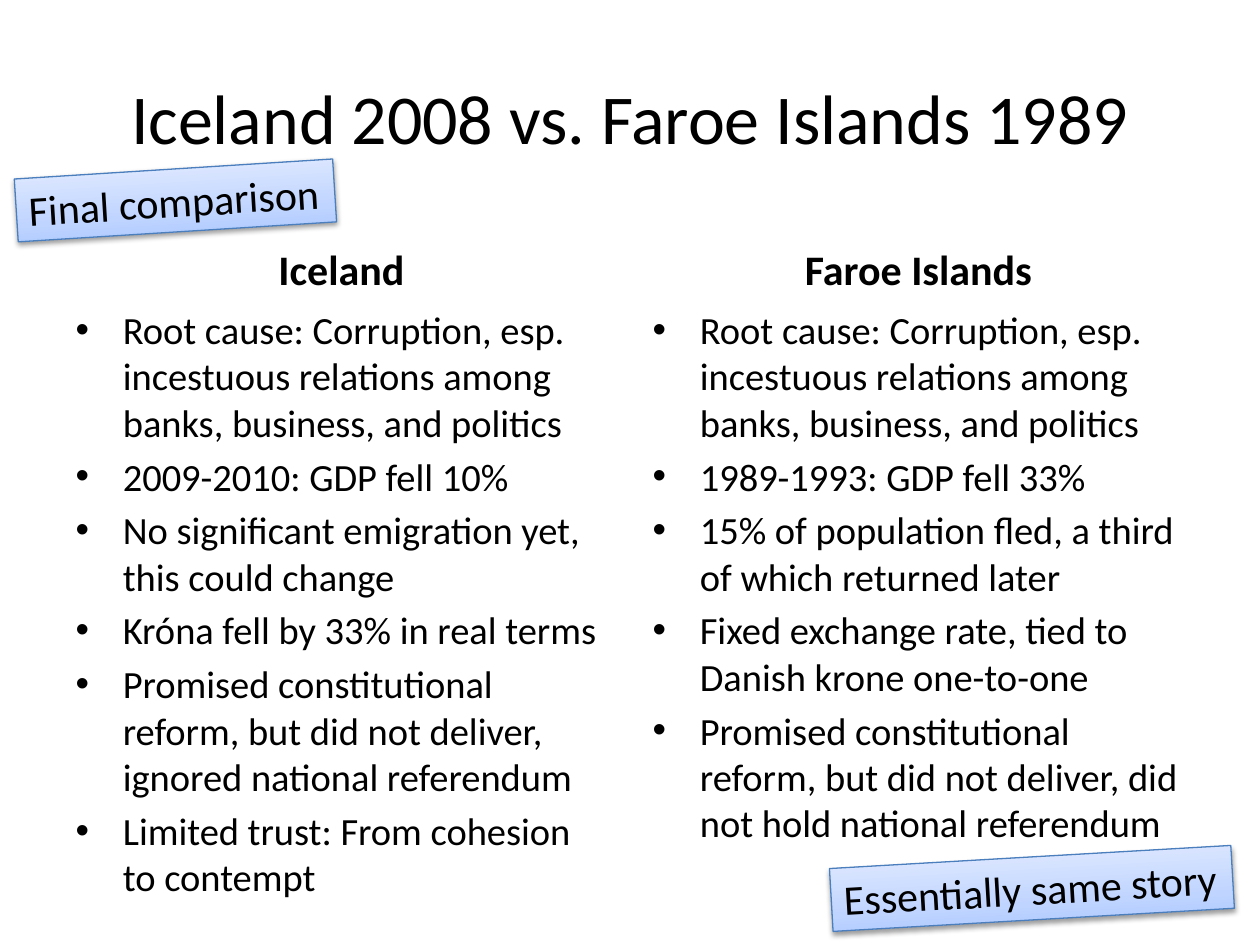
from dataclasses import dataclass

import lxml.etree
import pptx
import pptx.dml.color
import pptx.enum.shapes
import pptx.enum.text
import pptx.oxml.ns
import pptx.util

SCALE = 914400 / 126
Align = pptx.enum.text.PP_ALIGN
Anchor = pptx.enum.text.MSO_ANCHOR


@dataclass(frozen=True)
class Theme:
    font: str = "Calibri"
    ink: str = "000000"
    edge: str = "4B7EBC"
    stops: tuple = ((0, "A4C4FF"), (35, "BFD4FF"), (100, "E6EEFF"))
    title: int = 40
    head: int = 24
    body: int = 22


@dataclass(frozen=True)
class Box:
    left: int
    top: int
    width: int
    height: int


@dataclass(frozen=True)
class Column:
    left: int
    height: int
    head: str
    points: tuple[str, ...]


@dataclass(frozen=True)
class Label:
    text: str
    box: Box
    turn: float


THEME = Theme()
CAUSE = "Root cause: Corruption, esp. incestuous relations among banks, business, and politics"
COLUMNS = (
    Column(63, 620, "Iceland", (
        CAUSE,
        "2009-2010: GDP fell 10%",
        "No significant emigration yet, this could change",
        "Króna fell by 33% in real terms",
        "Promised constitutional reform, but did not deliver, ignored national referendum",
        "Limited trust: From cohesion to contempt",
    )),
    Column(640, 600, "Faroe Islands", (
        CAUSE,
        "1989-1993: GDP fell 33%",
        "15% of population fled, a third of which returned later",
        "Fixed exchange rate, tied to Danish krone one-to-one",
        "Promised constitutional reform, but did not deliver, did not hold national referendum",
    )),
)
LABELS = (
    Label("Essentially same story", Box(831, 857, 402, 63), 356.7),
    Label("Final comparison", Box(16, 169, 319, 63), 356.4),
)


def px(size: int) -> int:
    return round(size * SCALE)


def rgb(code: str) -> pptx.dml.color.RGBColor:
    return pptx.dml.color.RGBColor.from_string(code)


def place(shape, box: Box) -> None:
    shape.left, shape.top = px(box.left), px(box.top)
    shape.width, shape.height = px(box.width), px(box.height)


def write(shape, text: str, size: int, align: Align, bold: bool = False) -> None:
    """Set the text, one paragraph a line, and format its runs."""
    shape.text_frame.text = text
    for para in shape.text_frame.paragraphs:
        para.alignment = align
        for run in para.runs:
            font = run.font
            font.name, font.size, font.bold = THEME.font, pptx.util.Pt(size), bold
            font.color.rgb = rgb(THEME.ink)


def node(root, tag: str, **attrs):
    """Append a DrawingML element."""
    made = lxml.etree.SubElement(root, pptx.oxml.ns.qn("a:" + tag))
    for name, value in attrs.items():
        made.set(name, str(value))
    return made


def shade(shape) -> None:
    """Give the shape the theme's gradient and a soft drop shadow."""
    shape.fill.gradient()
    shape.fill.gradient_angle = 90
    props = shape.element.spPr
    stops = props.find(".//" + pptx.oxml.ns.qn("a:gsLst"))
    for old in list(stops):
        stops.remove(old)
    for pos, code in THEME.stops:
        node(node(stops, "gs", pos=pos * 1000), "srgbClr", val=code)
    shape.shadow.inherit = False
    effects = props.find(pptx.oxml.ns.qn("a:effectLst"))
    drop = node(effects, "outerShdw", blurRad=40000, dist=20000,
                dir=5400000, rotWithShape=0)
    node(node(drop, "srgbClr", val="000000"), "alpha", val=38000)


def draw_column(head, body, col: Column) -> None:
    place(head, Box(col.left, 212, 557, 88))
    write(head, col.head, THEME.head, Align.CENTER, True)
    head.text_frame.vertical_anchor = Anchor.BOTTOM
    place(body, Box(col.left, 300, 557, col.height))
    write(body, "\n".join(col.points), THEME.body, Align.LEFT)


def draw_label(slide, label: Label) -> None:
    shape = slide.shapes.add_shape(
        pptx.enum.shapes.MSO_SHAPE.RECTANGLE, 0, 0, 0, 0)
    place(shape, label.box)
    shape.rotation = label.turn
    shape.line.color.rgb = rgb(THEME.edge)
    shape.line.width = pptx.util.Pt(0.75)
    shade(shape)
    write(shape, label.text, THEME.head, Align.LEFT)
    frame = shape.text_frame
    frame.word_wrap = False
    frame.vertical_anchor = Anchor.TOP
    frame.auto_size = pptx.enum.text.MSO_AUTO_SIZE.SHAPE_TO_FIT_TEXT


def main() -> None:
    deck = pptx.Presentation()
    deck.slide_width, deck.slide_height = px(1260), px(945)
    slide = deck.slides.add_slide(deck.slide_layouts.get_by_name("Comparison"))
    title, *slots = list(slide.placeholders)[:5]
    place(title, Box(63, 38, 1134, 158))
    write(title, "Iceland 2008 vs. Faroe Islands 1989", THEME.title, Align.CENTER)
    title.text_frame.vertical_anchor = Anchor.MIDDLE
    for head, body, col in zip(slots[::2], slots[1::2], COLUMNS):
        draw_column(head, body, col)
    for label in LABELS:
        draw_label(slide, label)
    deck.save("out.pptx")


if __name__ == "__main__":
    main()
